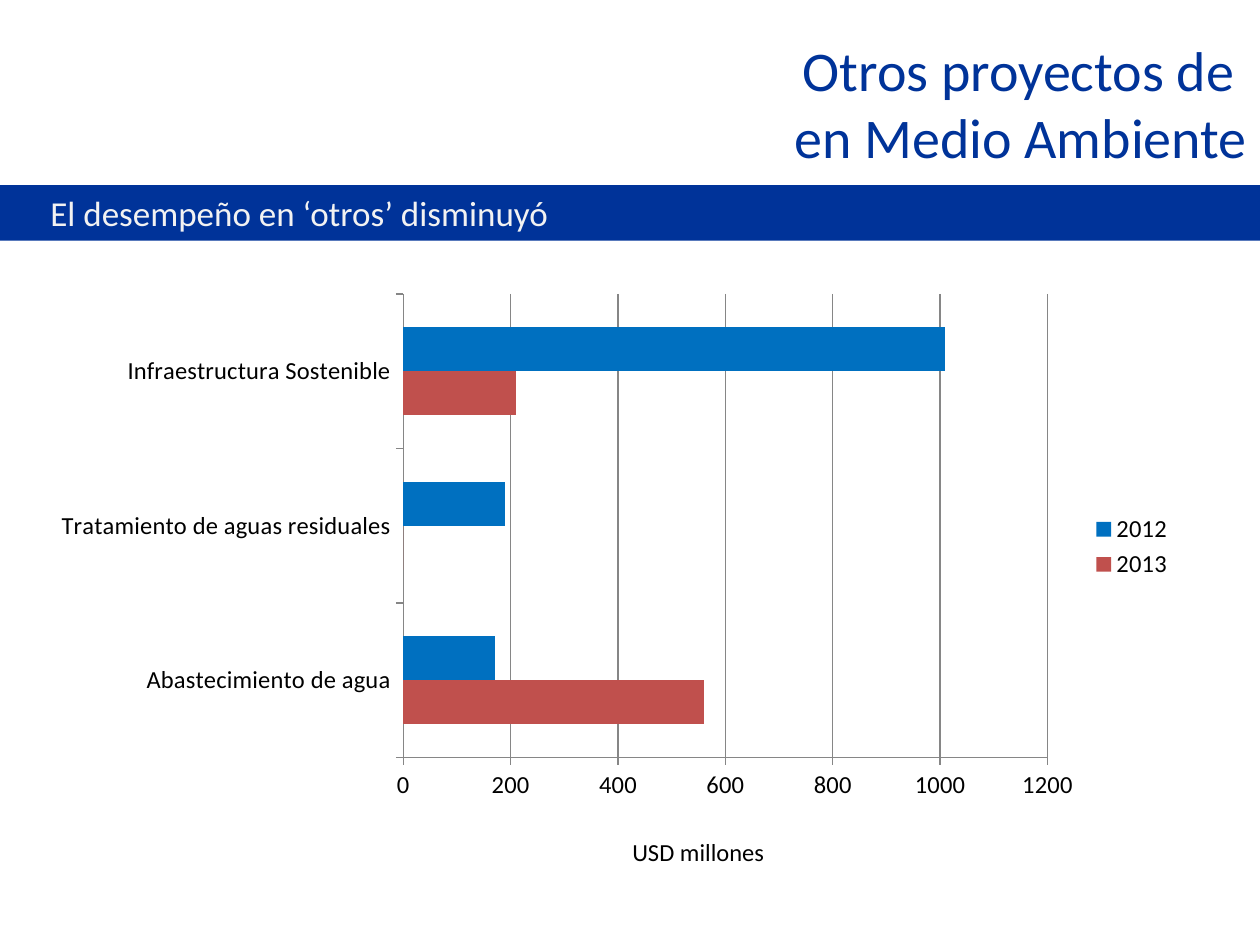
from pptx import Presentation
from pptx.chart.data import CategoryChartData
from pptx.dml.color import RGBColor
from pptx.enum import chart as ch, shapes, text
from pptx.oxml import parse_xml
from pptx.oxml.ns import nsdecls
from pptx.util import Inches, Pt

NAVY = RGBColor(0x00, 0x33, 0x99)
OFF_WHITE = RGBColor(0xF2, 0xF2, 0xF2)
BLACK = RGBColor(0, 0, 0)
GREY = RGBColor(0x86, 0x86, 0x86)
BLUE = RGBColor(0x00, 0x70, 0xC0)
RED = RGBColor(0xC0, 0x50, 0x4D)


def add_text(paragraph, words, size, color):
    run = paragraph.add_run()
    run.text = words
    run.font.name = "Calibri"
    run.font.size = Pt(size)
    run.font.color.rgb = color


prs = Presentation()
prs.slide_width, prs.slide_height = Inches(10), Inches(7.5)
slide = prs.slides.add_slide(prs.slide_layouts[5])

# Title
title = slide.shapes.title
title.left, title.top = Inches(1.69), Inches(0.23)
title.width, title.height = Inches(8.31), Inches(1.18)
title_frame = title.text_frame
title_frame.auto_size = text.MSO_AUTO_SIZE.NONE
title_frame.vertical_anchor = text.MSO_ANCHOR.TOP
for i, line in enumerate(["Otros proyectos de ", "en Medio Ambiente"]):
    paragraph = title_frame.add_paragraph() if i else title_frame.paragraphs[0]
    paragraph.alignment = text.PP_ALIGN.RIGHT
    paragraph.space_before = Pt(0)
    add_text(paragraph, line, 32, NAVY)

# Subtitle band
band = slide.shapes.add_shape(shapes.MSO_SHAPE.RECTANGLE, 0, Inches(1.47),
                              Inches(10), Inches(0.44))
band.shadow.inherit = False
band.fill.solid()
band.fill.fore_color.rgb = NAVY
band.line.fill.background()
band.text_frame.margin_left = Inches(0.4)
band.text_frame.vertical_anchor = text.MSO_ANCHOR.MIDDLE
message = band.text_frame.paragraphs[0]
message.alignment = text.PP_ALIGN.LEFT
add_text(message, "El desempeño en ‘otros’ disminuyó", 20, OFF_WHITE)

# Bar chart
data = CategoryChartData()
data.categories = ["Abastecimiento de agua", "Tratamiento de aguas residuales",
                   "Infraestructura Sostenible"]
data.add_series("2013", (560, 0, 210))
data.add_series("2012", (170, 190, 1010))
chart = slide.shapes.add_chart(ch.XL_CHART_TYPE.BAR_CLUSTERED, Inches(0.28), Inches(2.25),
                               Inches(9.13), Inches(4.18), data).chart
chart.has_title = False
chart.font.name = "Calibri"
chart.font.size = Pt(14)
chart.font.color.rgb = BLACK

plot = chart.plots[0]
plot.gap_width = 150
plot.vary_by_categories = False
for series, color in zip(plot.series, (RED, BLUE)):
    series.format.fill.solid()
    series.format.fill.fore_color.rgb = color

amounts = chart.value_axis
amounts.minimum_scale, amounts.maximum_scale, amounts.major_unit = 0, 1200, 200
amounts.has_major_gridlines = True
amounts.major_gridlines.format.line.color.rgb = GREY
for axis in (chart.category_axis, amounts):
    axis.major_tick_mark = ch.XL_TICK_MARK.OUTSIDE
    axis.minor_tick_mark = ch.XL_TICK_MARK.NONE
    axis.format.line.color.rgb = GREY
    axis.tick_labels.font.size = Pt(14)

chart.has_legend = True
chart.legend.position = ch.XL_LEGEND_POSITION.RIGHT
chart.legend.include_in_layout = False
chart.legend.font.size = Pt(14)

# Fixed inner plot area, as fractions of the chart frame
plot_area = chart.plots[0]._element.getparent()
for old_layout in plot_area.findall("{*}layout"):
    plot_area.remove(old_layout)
plot_area.insert(0, parse_xml(
    f'<c:layout {nsdecls("c")}><c:manualLayout><c:layoutTarget val="inner"/>'
    '<c:xMode val="edge"/><c:yMode val="edge"/><c:x val="0.32"/><c:y val="0.02"/>'
    '<c:w val="0.56"/><c:h val="0.88"/></c:manualLayout></c:layout>'))

# Axis caption
caption = slide.shapes.add_textbox(Inches(4.92), Inches(6.59), Inches(1.47), Inches(0.34))
caption.text_frame.word_wrap = True
add_text(caption.text_frame.paragraphs[0], "USD millones", 14, BLACK)

prs.save("out.pptx")
